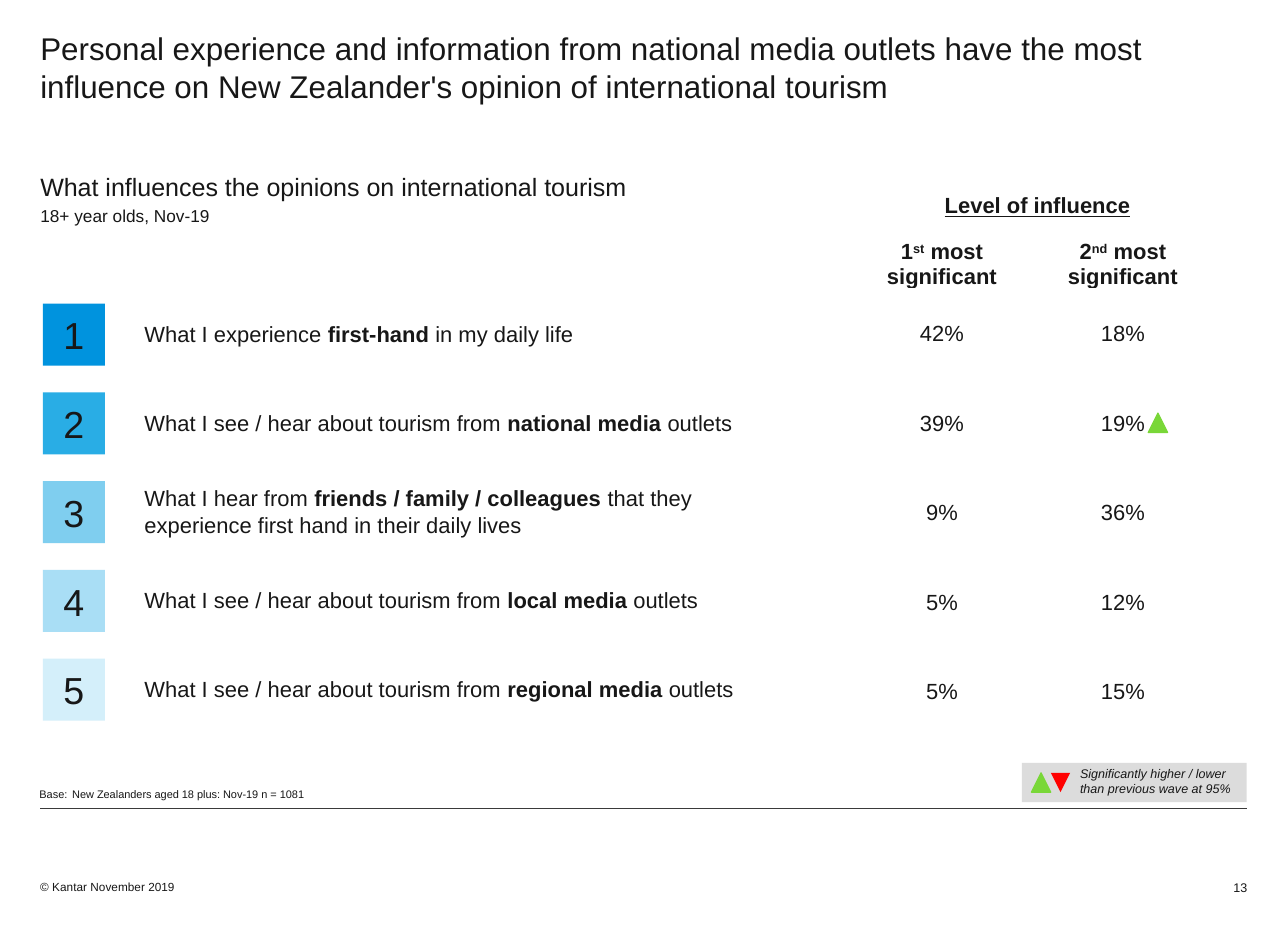
from pptx import Presentation
from pptx.dml.color import RGBColor
from pptx.enum.shapes import MSO_CONNECTOR, MSO_SHAPE
from pptx.enum.text import MSO_ANCHOR, MSO_AUTO_SIZE, PP_ALIGN
from pptx.oxml.ns import qn
from pptx.util import Pt
from lxml import etree

TOP, MIDDLE, BOTTOM = MSO_ANCHOR.TOP, MSO_ANCHOR.MIDDLE, MSO_ANCHOR.BOTTOM
LEFT, CENTER, RIGHT = PP_ALIGN.LEFT, PP_ALIGN.CENTER, PP_ALIGN.RIGHT
RECTANGLE, TRIANGLE = MSO_SHAPE.RECTANGLE, MSO_SHAPE.FLOWCHART_EXTRACT

# Content: a span is (text, format)
PLAIN, BOLD, SUPER = {}, {"bold": True}, {"bold": True, "superscript": True}
TITLE = ("Personal experience and information from national media outlets have the most "
         "influence on New Zealander's opinion of international tourism")
SUBTITLE = "What influences the opinions on international tourism"
AUDIENCE = "18+ year olds, Nov-19"
TABLE_TITLE = "Level of influence"
HEADERS = [("1", "st", " most significant"), ("2", "nd", " most significant")]
INFLUENCES = [
    ("0093DE", "What I experience ", "first-hand", " in my daily life", "42%", "18%"),
    ("29ADE5", "What I see / hear about tourism from ", "national media ", "outlets",
     "39%", "19%"),
    ("7FCEEF", "What I hear from ", "friends / family / colleagues ",
     "that they experience first hand in their daily lives", "9%", "36%"),
    ("A9DEF5", "What I see / hear about tourism from ", "local media ", "outlets",
     "5%", "12%"),
    ("D4EFFA", "What I see / hear about tourism from ", "regional media ", "outlets",
     "5%", "15%"),
]
LEGEND = "Significantly higher / lower than previous wave at 95%"
BASE = "Base:\tNew Zealanders aged 18 plus: Nov-19 n = 1081"
COPYRIGHT = "© Kantar November 2019"
PAGE_NUMBER = "13"

THEME = {
    "font": "Arial", "text": "171717", "rule": "3A3A3A", "legend": "DCDCDC",
    "higher": "79D738", "lower": "FF0000",
    "title": 20, "subtitle": 16, "audience": 11, "badge": 24, "body": 14,
    "small": 8, "copyright": 7.5, "base": 7,
}

# Layout in points
PAGE_W, PAGE_H = 822.24, 595.44
MARGIN, CONTENT_W = 25.7, 770.6
BADGE_X, BADGE_Y, BADGE_SIZE, BADGE_STEP = 27.4, 193.8, 39.6, 56.65
LABEL_X, LABEL_W, LABEL_DROP = 92.2, 393, 1.2
TABLE_X, TABLE_Y, COLUMN_W, ROW_H = 543.6, 127.4, 115.5, 57.1
MARK = 12.4
MARKS_Y = 493.2


def rgb(code):
    return RGBColor.from_string(code)


def write(para, spans, size, align=LEFT):
    para.alignment = align
    for text, style in spans:
        span = para.add_run()
        span.text = text
        style = dict(style)
        raised = style.pop("superscript", False)
        values = {"name": THEME["font"], "size": Pt(size), "bold": False, **style}
        for name, value in values.items():
            setattr(span.font, name, value)
        span.font.color.rgb = rgb(THEME["text"])
        if raised:
            span._r.get_or_add_rPr().set("baseline", "30000")


def format_frame(frame, anchor=TOP, insets=(0, 0, 0, 0), wrap=True):
    sides = ("margin_left", "margin_top", "margin_right", "margin_bottom")
    values = {"auto_size": MSO_AUTO_SIZE.NONE, "word_wrap": wrap, "vertical_anchor": anchor}
    values.update({side: Pt(inset) for side, inset in zip(sides, insets)})
    for name, value in values.items():
        setattr(frame, name, value)


def add_text(page, place, spans, size, align=LEFT, **frame_format):
    box = page.shapes.add_textbox(*map(Pt, place))
    format_frame(box.text_frame, **frame_format)
    write(box.text_frame.paragraphs[0], spans, size, align)
    return box.text_frame


def add_filled(page, kind, place, color, outlined=False):
    shape = page.shapes.add_shape(kind, *map(Pt, place))
    shape.shadow.inherit = False
    shape.fill.solid()
    shape.fill.fore_color.rgb = rgb(color)
    if outlined:
        shape.line.color.rgb = rgb(color)
        shape.line.width = Pt(0.75)
    else:
        shape.line.fill.background()
    return shape


def add_headings(page):
    title = page.shapes.title
    place = {"left": MARGIN, "top": 0, "width": CONTENT_W, "height": 89.3}
    for name, value in place.items():
        setattr(title, name, Pt(value))
    format_frame(title.text_frame, insets=(0, 18.7, 0, 0))
    write(title.text_frame.paragraphs[0], [(TITLE, PLAIN)], THEME["title"])

    frame = add_text(page, (MARGIN, 89.3, CONTENT_W, 66), [(SUBTITLE, PLAIN)],
                     THEME["subtitle"], insets=(0, 20, 0, 0))
    para = frame.add_paragraph()
    para.space_before = Pt(2.4)
    write(para, [(AUDIENCE, PLAIN)], THEME["audience"])


def add_ranking(page):
    for index, (color, before, strong, after, *_) in enumerate(INFLUENCES):
        y = BADGE_Y + index * BADGE_STEP
        badge = add_filled(page, RECTANGLE, (BADGE_X, y, BADGE_SIZE, BADGE_SIZE), color)
        format_frame(badge.text_frame, anchor=MIDDLE)
        write(badge.text_frame.paragraphs[0], [(str(index + 1), PLAIN)],
              THEME["badge"], CENTER)
        add_text(page, (LABEL_X, y + LABEL_DROP, LABEL_W, BADGE_SIZE),
                 [(before, PLAIN), (strong, BOLD), (after, PLAIN)], THEME["body"],
                 anchor=MIDDLE, insets=(0, 0, 0, 3.6))


def add_table(page):
    rows = [[[(number, BOLD), (suffix, SUPER), (rest, BOLD)]
             for number, suffix, rest in HEADERS]]
    rows += [[[(share, PLAIN)] for share in influence[-2:]] for influence in INFLUENCES]
    table = page.shapes.add_table(
        len(rows), len(HEADERS), Pt(TABLE_X), Pt(TABLE_Y),
        Pt(COLUMN_W * len(HEADERS)), Pt(ROW_H * len(rows))).table
    table.first_row = table.horz_banding = False
    for column in table.columns:
        column.width = Pt(COLUMN_W)
    for r, row in enumerate(rows):
        table.rows[r].height = Pt(ROW_H)
        for c, spans in enumerate(row):
            cell = table.cell(r, c)
            cell.fill.background()
            cell.vertical_anchor = MIDDLE if r else BOTTOM
            cell.margin_left = cell.margin_top = cell.margin_right = Pt(0.7)
            cell.margin_bottom = 0
            write(cell.text_frame.paragraphs[0], spans, THEME["body"], CENTER)
    add_text(page, (558, 122.4, 208.8, 20.2),
             [(TABLE_TITLE, {"bold": True, "underline": True})],
             THEME["body"], CENTER, wrap=False)
    # Significance mark beside the second-row share
    add_filled(page, TRIANGLE, (733, 263.6, MARK, MARK), THEME["higher"], outlined=True)


def add_legend(page):
    add_filled(page, RECTANGLE, (652.4, 486.8, 143.4, 25.2), THEME["legend"])
    add_text(page, (686.6, 486, 114, 25.2), [(LEGEND, {"italic": True})],
             THEME["small"], insets=(2.9, 2.9, 2.9, 2.9))
    lower = add_filled(page, TRIANGLE, (670.8, MARKS_Y, MARK, MARK), THEME["lower"])
    lower.rotation = 180
    add_filled(page, TRIANGLE, (658.4, MARKS_Y, MARK, MARK), THEME["higher"], outlined=True)


def add_footer(page):
    right = MARGIN + CONTENT_W
    rule = page.shapes.add_connector(MSO_CONNECTOR.STRAIGHT, Pt(MARGIN), Pt(516.2),
                                     Pt(right), Pt(516.2))
    rule.line.color.rgb = rgb(THEME["rule"])
    rule.line.width = Pt(0.75)
    etree.SubElement(rule._element.spPr, qn("a:effectLst"))

    frame = add_text(page, (25.2, 478, 600, 33.2), [(BASE, PLAIN)], THEME["base"],
                     anchor=BOTTOM)
    tabs = etree.SubElement(frame.paragraphs[0]._p.get_or_add_pPr(), qn("a:tabLst"))
    etree.SubElement(tabs, qn("a:tab"), pos=str(Pt(20.9)), algn="l")

    add_text(page, (MARGIN, 550.8, 200, 19.6), [(COPYRIGHT, PLAIN)],
             THEME["copyright"], anchor=BOTTOM)
    add_text(page, (right - 45.4, 549.4, 45.4, 21.6), [(PAGE_NUMBER, PLAIN)],
             THEME["small"], RIGHT, anchor=BOTTOM)


def main():
    deck = Presentation()
    deck.slide_width, deck.slide_height = Pt(PAGE_W), Pt(PAGE_H)
    page = deck.slides.add_slide(deck.slide_layouts.get_by_name("Title Only"))
    for add_part in (add_headings, add_ranking, add_table, add_legend, add_footer):
        add_part(page)
    deck.save("out.pptx")


if __name__ == "__main__":
    main()
